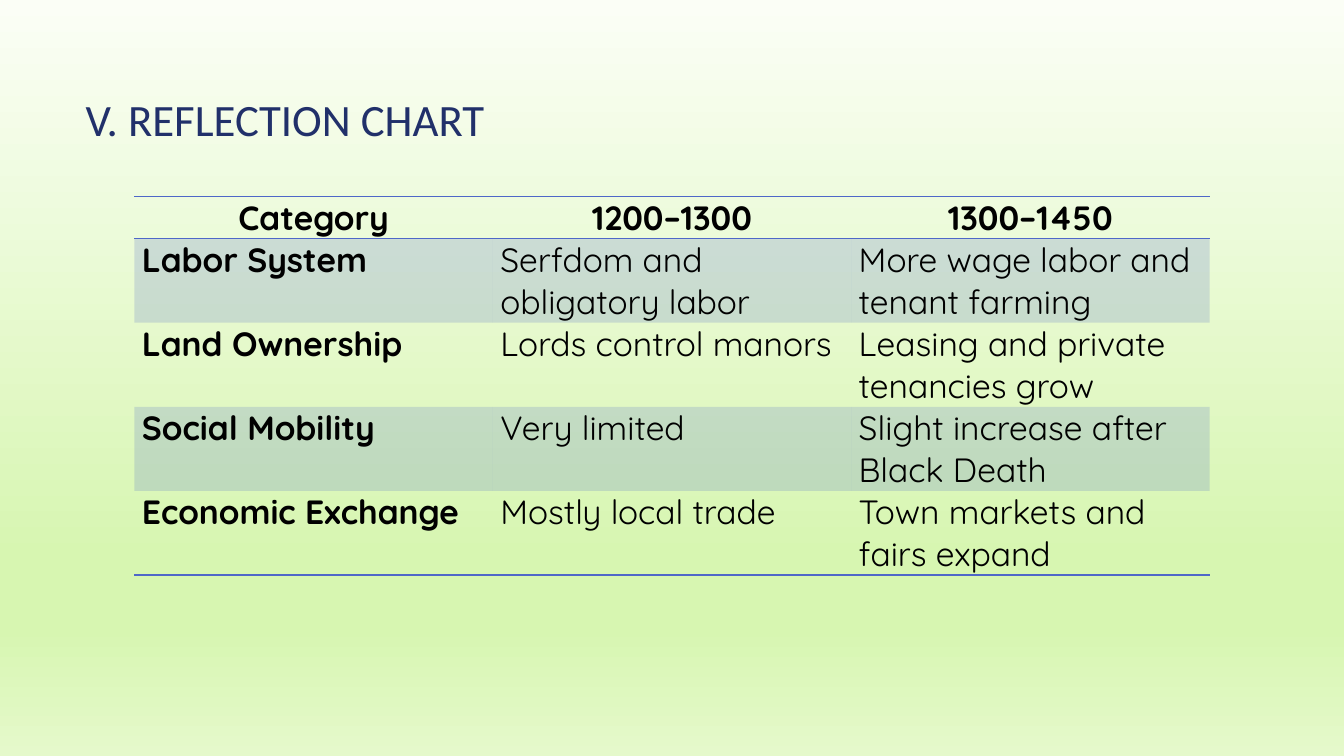
from dataclasses import dataclass

from lxml.etree import SubElement
from pptx import Presentation
from pptx.dml.color import RGBColor
from pptx.enum.text import MSO_ANCHOR, PP_ALIGN
from pptx.oxml import parse_xml
from pptx.oxml.ns import nsdecls, qn
from pptx.util import Pt

NO_STYLE = "{2D5ABB26-0587-4C30-8999-92F81FD0307C}"


@dataclass(frozen=True)
class Theme:
    title_font: str = "Calibri"
    body_font: str = "Quicksand"
    title_size: int = 32
    body_size: int = 24
    title_color: str = "21306A"
    text_color: str = "000000"
    accent: str = "4E67C8"
    band_opacity: int = 20
    backdrop: tuple = ((0, "FBFEF6"), (74, "D7F6B1"), (83, "D7F6B1"), (100, "E5F9CB"))


class Deck:
    def __init__(self, theme):
        self.theme = theme
        self.prs = Presentation()
        self.prs.slide_width, self.prs.slide_height = Pt(960), Pt(540)
        self.s = self.prs.slides.add_slide(self.prs.slide_layouts[5])

    def background(self):
        fill = self.s.background.fill
        fill.gradient()
        fill.gradient_angle = 270
        stops = self.s.element.xpath(".//a:gsLst")[0]
        for stop in list(stops):
            stops.remove(stop)
        for position, color in self.theme.backdrop:
            stop = SubElement(stops, qn("a:gs"), pos=str(position * 1000))
            SubElement(stop, qn("a:srgbClr"), val=color)

    def run(self, p, text, font, size, color, bold=False):
        r = p.add_run()
        r.text = text
        r.font.name, r.font.size, r.font.bold = font, Pt(size), bold
        r.font.color.rgb = RGBColor.from_string(color)

    def title(self, text, left, top, width, height):
        sp = self.s.shapes.title
        sp.left, sp.top, sp.width, sp.height = map(Pt, (left, top, width, height))
        tf = sp.text_frame
        tf.word_wrap = True
        tf.vertical_anchor = MSO_ANCHOR.BOTTOM
        p = tf.paragraphs[0]
        p.alignment, p.line_spacing = PP_ALIGN.LEFT, 0.9
        t = self.theme
        self.run(p, text, t.title_font, t.title_size, t.title_color)

    def band(self, cell):
        """Give the cell a translucent accent fill."""
        cell.fill.solid()
        cell.fill.fore_color.rgb = RGBColor.from_string(self.theme.accent)
        color = cell._tc.tcPr.find(".//" + qn("a:srgbClr"))
        SubElement(color, qn("a:alpha"), val=str(self.theme.band_opacity * 1000))

    def rule(self, cell, sides):
        """Draw accent borders; sides is a list of 'T' and 'B' in that order."""
        for i, side in enumerate(sides):
            cell._tc.get_or_add_tcPr().insert(i, parse_xml(
                f'<a:ln{side} {nsdecls("a")} w="{Pt(1)}"><a:solidFill>'
                f'<a:srgbClr val="{self.theme.accent}"/></a:solidFill></a:ln{side}>'))

    def table(self, rows, left, top, col_width, row_heights):
        n_rows, n_cols = len(rows), len(rows[0])
        frame = self.s.shapes.add_table(n_rows, n_cols, Pt(left), Pt(top),
                                        Pt(col_width * n_cols), Pt(sum(row_heights)))
        table = frame.table
        table.first_row = table.horz_banding = False
        frame.element.xpath(".//a:tableStyleId")[0].text = NO_STYLE
        for column in table.columns:
            column.width = Pt(col_width)
        t = self.theme
        for i, (texts, height) in enumerate(zip(rows, row_heights)):
            table.rows[i].height = Pt(height)
            for j, text in enumerate(texts):
                cell = table.cell(i, j)
                cell.margin_left = cell.margin_right = Pt(5.4)
                cell.margin_top = cell.margin_bottom = 0
                p = cell.text_frame.paragraphs[0]
                p.alignment = PP_ALIGN.LEFT if i else PP_ALIGN.CENTER
                self.run(p, text, t.body_font, t.body_size, t.text_color,
                         bold=i == 0 or j == 0)
                if i % 2:
                    self.band(cell)
                else:
                    cell.fill.background()
                if i == 0:
                    self.rule(cell, "TB")
                elif i == n_rows - 1:
                    self.rule(cell, "B")


def main():
    deck = Deck(Theme())
    deck.background()
    deck.title("V. REFLECTION CHART", 54, 28.8, 768, 79.2)
    rows = [
        ("Category", "1200–1300", "1300–1450"),
        ("Labor System", "Serfdom and obligatory labor",
         "More wage labor and tenant farming"),
        ("Land Ownership", "Lords control manors",
         "Leasing and private tenancies grow"),
        ("Social Mobility", "Very limited", "Slight increase after Black Death"),
        ("Economic Exchange", "Mostly local trade", "Town markets and fairs expand"),
    ]
    deck.table(rows, left=96, top=140.4, col_width=256, row_heights=[30] + [60] * 4)
    deck.prs.save("out.pptx")


if __name__ == "__main__":
    main()
